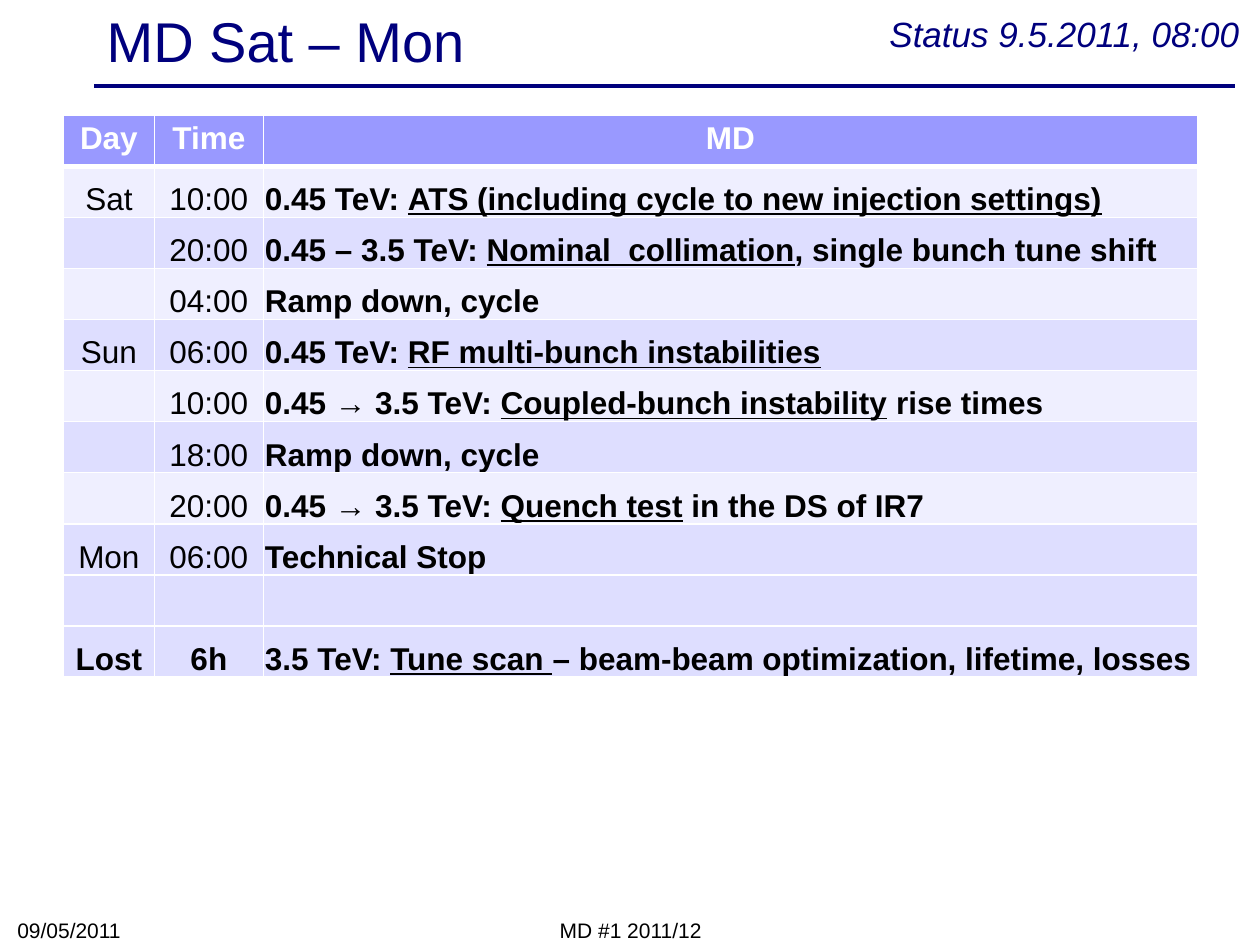
from lxml.etree import SubElement
from pptx import Presentation
from pptx.dml.color import RGBColor
from pptx.enum.shapes import MSO_CONNECTOR
from pptx.enum.text import MSO_ANCHOR, PP_ALIGN
from pptx.oxml import parse_xml
from pptx.oxml.ns import nsdecls, qn
from pptx.util import Cm, Pt

NAVY = RGBColor(0x00, 0x00, 0x7D)
BLACK = RGBColor(0x00, 0x00, 0x00)
WHITE = RGBColor(0xFF, 0xFF, 0xFF)
HEADER_FILL = RGBColor(0x99, 0x99, 0xFF)
LIGHT_FILL = RGBColor(0xEF, 0xEF, 0xFF)
DARK_FILL = RGBColor(0xDE, 0xDE, 0xFF)


def write(frame, *parts, size=18, color=BLACK, bold=False, italic=False,
          align=PP_ALIGN.LEFT):
    """Fill the first paragraph; every second part is underlined."""
    paragraph = frame.paragraphs[0]
    paragraph.alignment = align
    for index, part in enumerate(parts):
        run = paragraph.add_run()
        run.text = part
        run.font.name = "Arial"
        run.font.size = Pt(size)
        run.font.color.rgb = color
        run.font.bold = bold
        run.font.italic = italic
        run.font.underline = index % 2 == 1


def set_borders(cell, top, bottom):
    """Draw white cell borders, 1 pt at the sides."""
    properties = cell._tc.get_or_add_tcPr()
    for side, width in (("L", 1), ("R", 1), ("T", top), ("B", bottom)):
        properties.append(parse_xml(
            f'<a:ln{side} {nsdecls("a")} w="{Pt(width)}"><a:solidFill>'
            f'<a:srgbClr val="{WHITE}"/></a:solidFill></a:ln{side}>'))


prs = Presentation()
prs.slide_width, prs.slide_height = Cm(25.4), Cm(19.05)
slide = prs.slides.add_slide(prs.slide_layouts[6])

title_rule = slide.shapes.add_connector(
    MSO_CONNECTOR.STRAIGHT, Cm(1.9), Cm(1.73), Cm(24.9), Cm(1.73))
title_rule.line.color.rgb = NAVY
title_rule.line.width = Pt(2)
SubElement(title_rule._element.spPr, qn("a:effectLst"))

# left, top, width, height, anchor, wrap, text, format
labels = [
    (1.9, 0.08, 22.86, 1.45, MSO_ANCHOR.MIDDLE, True, "MD Sat – Mon",
     dict(size=32, color=NAVY)),
    (17.68, 0.13, 7.8, 1.12, MSO_ANCHOR.TOP, False, "Status 9.5.2011, 08:00",
     dict(size=20, color=NAVY, italic=True)),
    (8.69, 18.42, 8.05, 0.71, MSO_ANCHOR.BOTTOM, True, "MD #1 2011/12",
     dict(size=12, align=PP_ALIGN.CENTER)),
    (0.1, 18.39, 5.92, 0.74, MSO_ANCHOR.BOTTOM, True, "09/05/2011",
     dict(size=12)),
]
for left, top, width, height, anchor, wrap, text, text_format in labels:
    frame = slide.shapes.add_textbox(
        Cm(left), Cm(top), Cm(width), Cm(height)).text_frame
    frame.word_wrap = wrap
    frame.vertical_anchor = anchor
    write(frame, text, **text_format)

# day, time, parts of the MD description
schedule = [
    ("Day", "Time", ["MD"]),
    ("Sat", "10:00", ["0.45 TeV: ",
                      "ATS (including cycle to new injection settings)"]),
    ("", "20:00", ["0.45 – 3.5 TeV: ", "Nominal  collimation",
                   ", single bunch tune shift"]),
    ("", "04:00", ["Ramp down, cycle"]),
    ("Sun", "06:00", ["0.45 TeV: ", "RF multi-bunch instabilities"]),
    ("", "10:00", ["0.45 → 3.5 TeV: ", "Coupled-bunch instability",
                   " rise times"]),
    ("", "18:00", ["Ramp down, cycle"]),
    ("", "20:00", ["0.45 → 3.5 TeV: ", "Quench test", " in the DS of IR7"]),
    ("Mon", "06:00", ["Technical Stop"]),
    ("", "", []),
    ("Lost", "6h", ["3.5 TeV: ", "Tune scan ",
                    "– beam-beam optimization, lifetime, losses"]),
]
table = slide.shapes.add_table(
    len(schedule), 3, Cm(1.28), Cm(2.32), Cm(22.86), Cm(11.33)).table
table.horz_banding = False
for column, width in zip(table.columns, (1.83, 2.2, 18.83)):
    column.width = Cm(width)

for row_index, (day, time, description) in enumerate(schedule):
    table.rows[row_index].height = Cm(1.03)
    is_header = row_index == 0
    is_lost = day == "Lost"
    if is_header:
        fill = HEADER_FILL
    elif row_index < 8 and row_index % 2 == 1:
        fill = LIGHT_FILL
    else:
        fill = DARK_FILL
    for column_index, parts in enumerate(([day], [time], description)):
        cell = table.cell(row_index, column_index)
        is_description = column_index == 2
        set_borders(cell, top=3 if row_index == 1 else 1,
                    bottom=3 if is_header else 1)
        cell.fill.solid()
        cell.fill.fore_color.rgb = fill
        if not is_header:
            cell.vertical_anchor = MSO_ANCHOR.BOTTOM
            cell.margin_left = cell.margin_right = cell.margin_top = Cm(0.03)
            cell.margin_bottom = Cm(0)
        if any(parts):
            write(cell.text_frame, *parts,
                  color=WHITE if is_header else BLACK,
                  bold=is_header or is_lost or is_description,
                  align=PP_ALIGN.LEFT if is_description and not is_header
                  else PP_ALIGN.CENTER)

prs.save("out.pptx")
